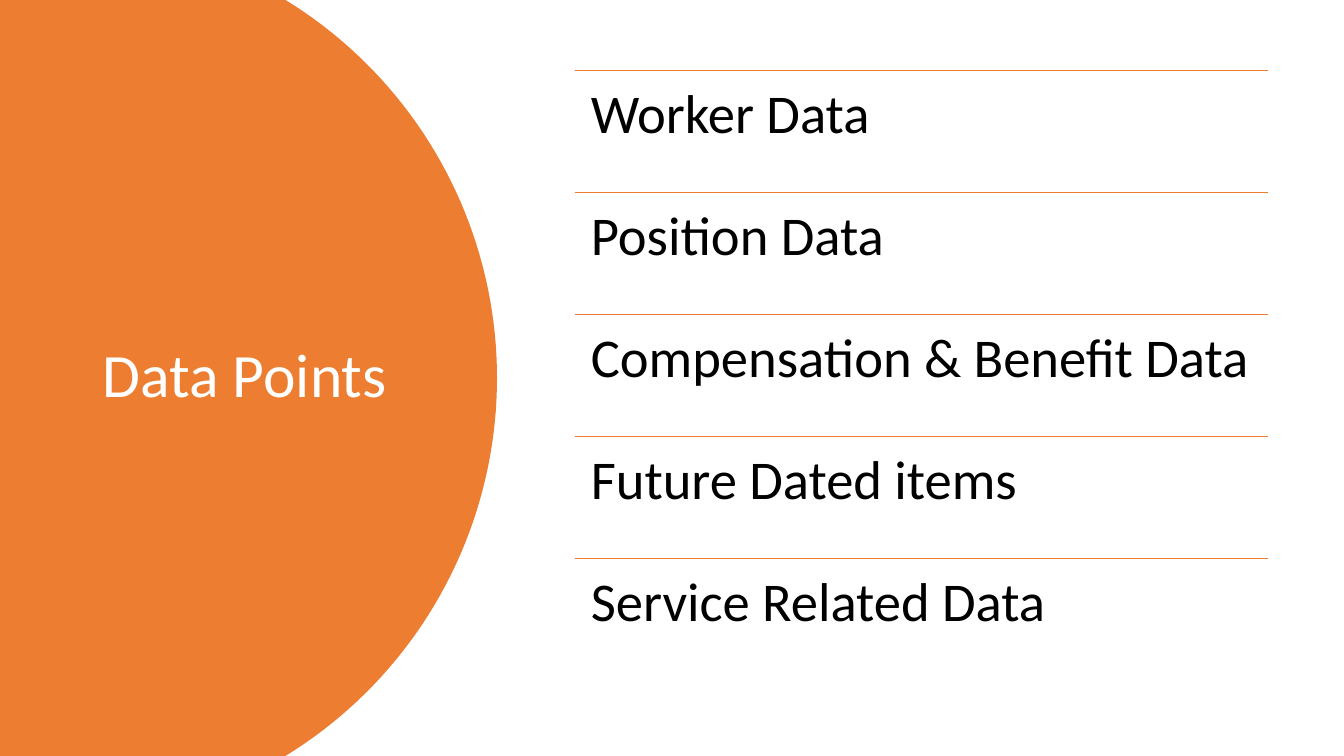
from dataclasses import dataclass
from math import asin, cos, sin

from lxml.etree import SubElement
from pptx import Presentation
from pptx.dml.color import RGBColor
from pptx.enum.shapes import MSO_CONNECTOR
from pptx.enum.text import MSO_ANCHOR
from pptx.oxml.ns import qn
from pptx.slide import Slide
from pptx.util import Emu, Pt


@dataclass(frozen=True)
class Theme:
    accent: RGBColor = RGBColor(0xED, 0x7D, 0x31)
    light: RGBColor = RGBColor(0xFF, 0xFF, 0xFF)
    dark: RGBColor = RGBColor(0, 0, 0)
    font: str = "Calibri"
    title: int = 44
    item: int = 39
    rule: int = 1


@dataclass(frozen=True)
class Label:
    text: str
    left: int
    top: int
    width: int
    height: int
    size: int
    color: RGBColor
    anchor: MSO_ANCHOR
    pad_x: int
    pad_y: int


THEME = Theme()
WIDTH, HEIGHT = 1333, 750
CENTER, RADIUS, STEPS = 53, 440, 80
LEFT, TOP, SPAN, PITCH = 570, 70, 688, 121
ITEMS = (
    "Worker Data",
    "Position Data",
    "Compensation & Benefit Data",
    "Future Dated items",
    "Service Related Data",
)


def px(value: float) -> Emu:
    return Emu(round(value * 9144))


def apply(target: object, values: dict[str, object]) -> None:
    for name, value in values.items():
        setattr(target, name, value)


def draw_panel(slide: Slide) -> None:
    middle = HEIGHT / 2
    limit = asin(middle / RADIUS)
    angles = [limit * (2 * step / STEPS - 1) for step in range(STEPS + 1)]
    arc = [(px(CENTER + RADIUS * cos(a)), px(middle + RADIUS * sin(a))) for a in angles]
    outline = slide.shapes.build_freeform(0, 0)
    outline.add_line_segments([*arc, (0, px(HEIGHT))], close=True)
    panel = outline.convert_to_shape()
    panel.shadow.inherit = False
    panel.fill.solid()
    panel.fill.fore_color.rgb = THEME.accent
    panel.line.fill.background()


def draw_label(slide: Slide, label: Label) -> None:
    box = slide.shapes.add_textbox(
        px(label.left), px(label.top), px(label.width), px(label.height)
    )
    frame = box.text_frame
    apply(frame, {
        "word_wrap": True,
        "vertical_anchor": label.anchor,
        "margin_left": px(label.pad_x),
        "margin_right": px(label.pad_x),
        "margin_top": px(label.pad_y),
        "margin_bottom": px(label.pad_y),
    })
    line = frame.paragraphs[0]
    line.line_spacing = 0.9
    run = line.add_run()
    run.text = label.text
    apply(run.font, {"name": THEME.font, "size": Pt(label.size)})
    run.font.color.rgb = label.color


def draw_rule(slide: Slide, top: int) -> None:
    rule = slide.shapes.add_connector(
        MSO_CONNECTOR.STRAIGHT, px(LEFT), px(top), px(LEFT + SPAN), px(top)
    )
    rule.line.color.rgb = THEME.accent
    rule.line.width = Pt(THEME.rule)
    SubElement(rule.element.spPr, qn("a:effectLst"))


def main() -> None:
    deck = Presentation()
    apply(deck, {"slide_width": px(WIDTH), "slide_height": px(HEIGHT)})
    slide = deck.slides.add_slide(deck.slide_layouts[6])
    draw_panel(slide)
    draw_label(slide, Label("Data Points", 92, 70, 323, 609, THEME.title,
                            THEME.light, MSO_ANCHOR.MIDDLE, 10, 5))
    for index, text in enumerate(ITEMS):
        top = TOP + index * PITCH
        draw_rule(slide, top)
        draw_label(slide, Label(text, LEFT, top, SPAN, PITCH, THEME.item,
                                THEME.dark, MSO_ANCHOR.TOP, 16, 16))
    deck.save("out.pptx")


if __name__ == "__main__":
    main()
